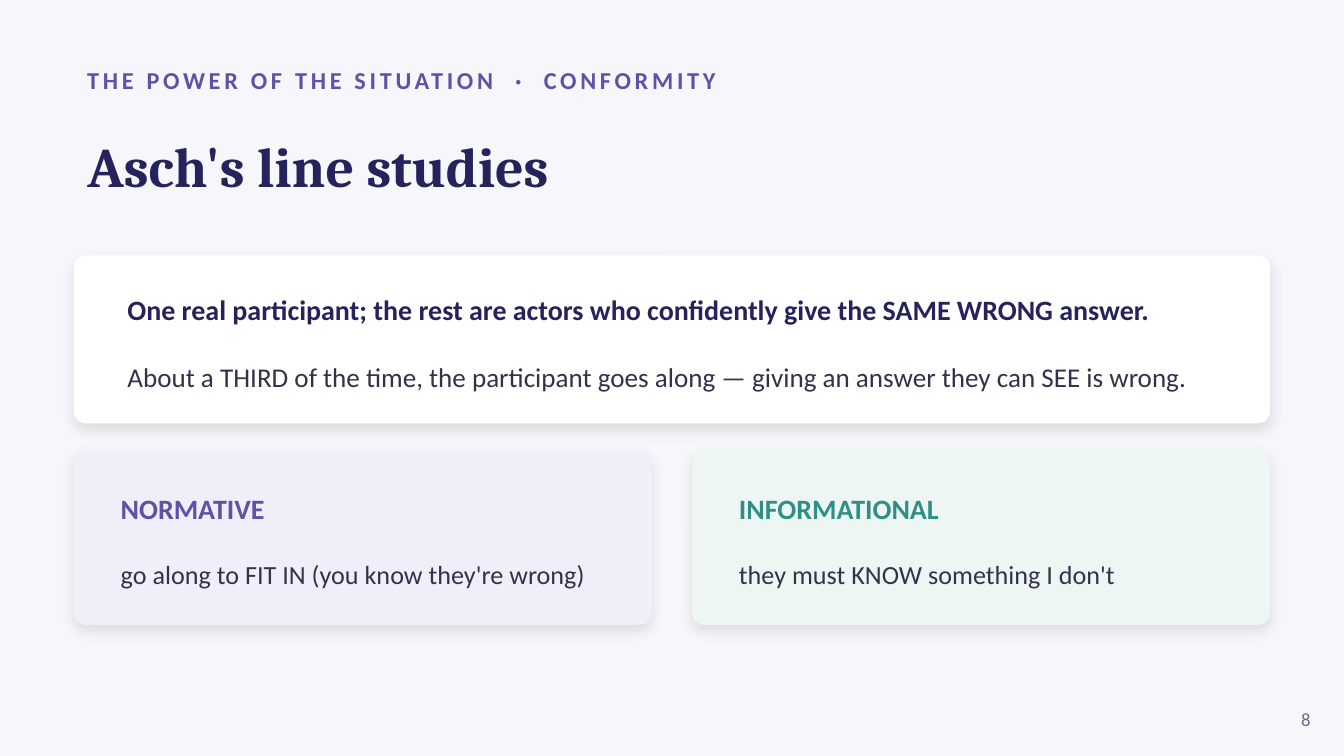
from lxml.etree import SubElement
from pptx import Presentation
from pptx.dml.color import RGBColor
from pptx.enum.shapes import MSO_SHAPE
from pptx.enum.text import MSO_ANCHOR, MSO_AUTO_SIZE, PP_ALIGN
from pptx.oxml.ns import qn
from pptx.util import Pt

BACKGROUND = RGBColor(0xF7, 0xF7, 0xFB)
WHITE = RGBColor(0xFF, 0xFF, 0xFF)
NAVY = RGBColor(0x26, 0x23, 0x5C)
VIOLET = RGBColor(0x5B, 0x53, 0xA6)
TEAL = RGBColor(0x2F, 0x8F, 0x86)
INK = RGBColor(0x33, 0x32, 0x4A)
MUTED = RGBColor(0x6B, 0x6A, 0x86)
PALE_VIOLET = RGBColor(0xF0, 0xEE, 0xF8)
PALE_TEAL = RGBColor(0xEE, 0xF6, 0xF4)

LEFT = 39.6
CONTENT_WIDTH = 640.8
CARD_GAP = 21.6
CARD_WIDTH = (CONTENT_WIDTH - CARD_GAP) / 2
CARD_INSET = 18
CORNER_RADIUS = 6.48
LINE_GAP = 18


def text_format(size, color, bold=False, name="Calibri"):
    return {"name": name, "size": Pt(size), "bold": bold, "color": color}


def format_font(font, values):
    for key, value in values.items():
        if key == "color":
            font.color.rgb = value
        else:
            setattr(font, key, value)


def write_lines(frame, lines, align=PP_ALIGN.LEFT):
    settings = {
        "word_wrap": True,
        "auto_size": MSO_AUTO_SIZE.NONE,
        "vertical_anchor": MSO_ANCHOR.MIDDLE,
    }
    for key, value in settings.items():
        setattr(frame, key, value)
    for index, (wording, values) in enumerate(lines):
        line = frame.add_paragraph() if index else frame.paragraphs[0]
        line.alignment = align
        if index:
            line.space_before = Pt(LINE_GAP)
        run = line.add_run()
        run.text = wording
        format_font(run.font, values)


def add_text(slide, bounds, lines, align=PP_ALIGN.LEFT):
    label = slide.shapes.add_textbox(*map(Pt, bounds))
    write_lines(label.text_frame, lines, align)
    return label


def add_title(slide, bounds, wording):
    title = slide.shapes.title
    for key, value in zip(("left", "top", "width", "height"), bounds):
        setattr(title, key, Pt(value))
    write_lines(title.text_frame, [(wording, text_format(30, NAVY, True, "Cambria"))])


def add_soft_shadow(card):
    card.shadow.inherit = False
    effects = card._element.spPr.find(qn("a:effectLst"))
    shadow = SubElement(
        effects, qn("a:outerShdw"), blurRad=str(Pt(7)), dist=str(Pt(3)),
        dir="5400000", algn="ctr", rotWithShape="0",
    )
    tint = SubElement(shadow, qn("a:srgbClr"), val="000000")
    SubElement(tint, qn("a:alpha"), val="10000")


def add_card(slide, bounds, fill):
    card = slide.shapes.add_shape(MSO_SHAPE.ROUNDED_RECTANGLE, *map(Pt, bounds))
    card.adjustments[0] = CORNER_RADIUS / bounds[3]
    card.fill.solid()
    card.fill.fore_color.rgb = fill
    card.line.fill.background()
    add_soft_shadow(card)


def add_influence_card(slide, left, fill, accent, heading, meaning):
    add_card(slide, (left, 241.2, CARD_WIDTH, 93.6), fill)
    add_text(
        slide,
        (left + CARD_INSET, 259.2, CARD_WIDTH - 2 * CARD_INSET, 61.2),
        [(heading, text_format(15, accent, True)), (meaning, text_format(14, INK))],
    )


def main():
    deck = Presentation()
    deck.slide_width, deck.slide_height = Pt(720), Pt(405)
    slide = deck.slides.add_slide(deck.slide_layouts[5])
    slide.background.fill.solid()
    slide.background.fill.fore_color.rgb = BACKGROUND

    topic = add_text(
        slide, (LEFT, 30.24, 648, 25.2),
        [("THE POWER OF THE SITUATION  ·  CONFORMITY", text_format(13, VIOLET, True))],
    )
    topic.text_frame.paragraphs[0].runs[0].font._element.set("spc", "200")
    add_title(slide, (LEFT, 56.16, CONTENT_WIDTH, 64.8), "Asch's line studies")

    add_card(slide, (LEFT, 136.8, CONTENT_WIDTH, 90), WHITE)
    add_text(slide, (61.2, 151.2, 597.6, 64.8), [
        ("One real participant; the rest are actors who confidently give the SAME WRONG answer.",
         text_format(15, NAVY, True)),
        ("About a THIRD of the time, the participant goes along — giving an answer they can SEE is wrong.",
         text_format(14.5, INK)),
    ])

    influences = [
        (PALE_VIOLET, VIOLET, "NORMATIVE", "go along to FIT IN (you know they're wrong)"),
        (PALE_TEAL, TEAL, "INFORMATIONAL", "they must KNOW something I don't"),
    ]
    for column, influence in enumerate(influences):
        add_influence_card(slide, LEFT + column * (CARD_WIDTH + CARD_GAP), *influence)

    add_text(slide, (673.2, 374.4, 36, 21.6), [("8", text_format(10, MUTED))], PP_ALIGN.RIGHT)
    deck.save("out.pptx")


if __name__ == "__main__":
    main()
